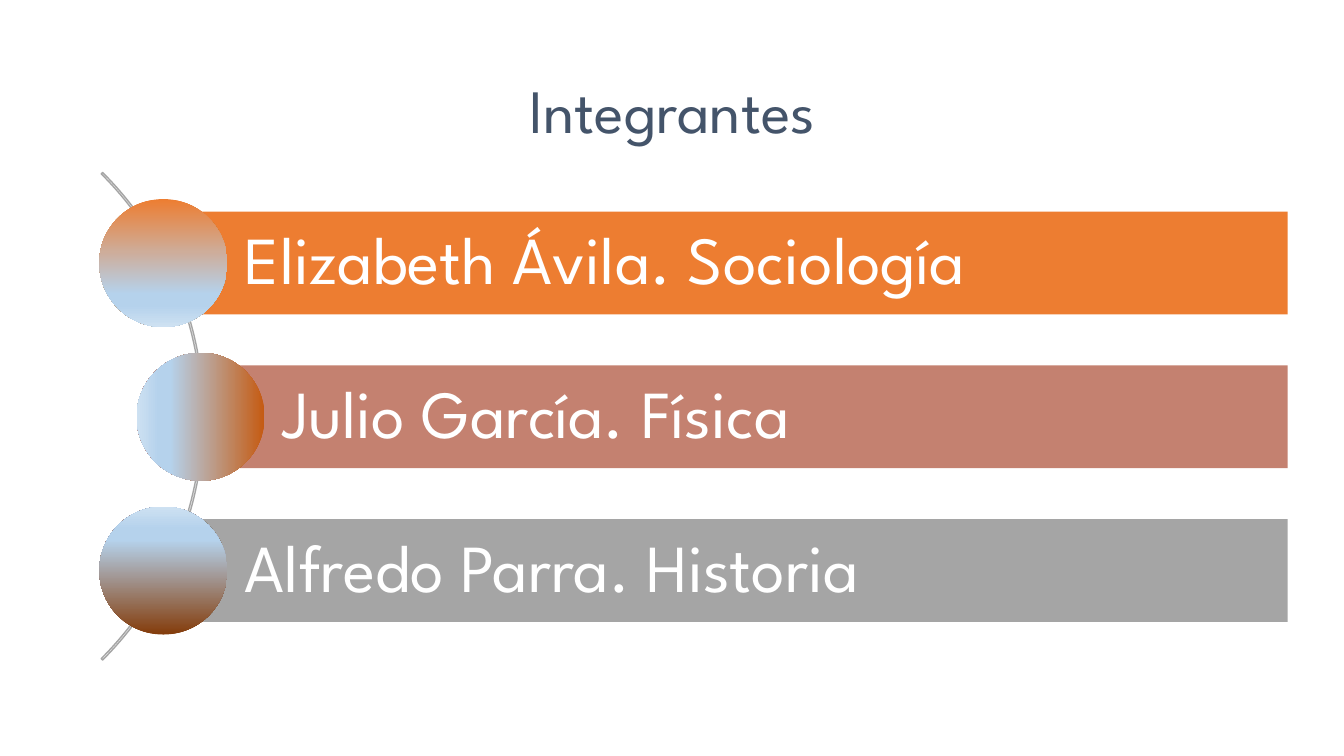
import copy
from dataclasses import dataclass

import pptx
import pptx.dml.color
import pptx.enum.shapes
import pptx.enum.text
import pptx.oxml.ns
import pptx.presentation
import pptx.shapes.autoshape
import pptx.shapes.group
import pptx.slide
import pptx.text.text
import pptx.util
from pptx.util import Inches

FONT_NAME = "League Spartan"
BAR_RIGHT = 12.77
BAR_HEIGHT = 1.02
FIRST_BAR_TOP = 2.1
LAST_BAR_TOP = 5.15
CIRCLE_DIAMETER = 1.27
ARC_DIAMETER = 6.84


@dataclass(frozen=True)
class Member:
    text: str
    bar_left: float
    bar_color: str
    circle_color: str
    gradient_angle: int


MEMBERS = [
    Member("Elizabeth Ávila. Sociología", 1.62, "ED7D31", "ED7D31", 270),
    Member("Julio García. Física", 1.99, "C48170", "C55A11", 180),
    Member("Alfredo Parra. Historia", 1.62, "A5A5A5", "843C0B", 90),
]


def rgb(color: str) -> pptx.dml.color.RGBColor:
    return pptx.dml.color.RGBColor.from_string(color)


def format_paragraph(
    paragraph: pptx.text.text._Paragraph,
    size: float,
    color: str,
    alignment: pptx.enum.text.PP_ALIGN,
) -> None:
    paragraph.alignment = alignment
    paragraph.line_spacing = 0.9
    for run in paragraph.runs:
        run.font.name = FONT_NAME
        run.font.size = pptx.util.Pt(size)
        run.font.color.rgb = rgb(color)


def add_plain_shape(
    group: pptx.shapes.group.GroupShape,
    kind: pptx.enum.shapes.MSO_SHAPE,
    left: float,
    top: float,
    width: float,
    height: float,
) -> pptx.shapes.autoshape.Shape:
    """Add a shape without shadow or outline."""
    shape = group.shapes.add_shape(
        kind, Inches(left), Inches(top), Inches(width), Inches(height)
    )
    shape.shadow.inherit = False
    shape.line.fill.background()
    return shape


def fill_with_gradient(
    shape: pptx.shapes.autoshape.Shape, first_color: str, angle: int
) -> None:
    """Fade from first_color to pale blue; angle runs counter-clockwise."""
    shape.fill.gradient()
    shape.fill.gradient_angle = angle
    stop_list = next(shape.element.iter(pptx.oxml.ns.qn("a:gsLst")))
    for _ in range(2):
        stop_list.append(copy.deepcopy(stop_list[0]))
    stops = [(0, first_color), (0.74, "B5D2EC"), (0.83, "B5D2EC"), (1, "CEE1F2")]
    for stop, (position, color) in zip(shape.fill.gradient_stops, stops):
        stop.position = position
        stop.color.rgb = rgb(color)


def add_title(slide: pptx.slide.Slide) -> None:
    title = slide.shapes.title
    title.left, title.top = Inches(0.92), Inches(0.4)
    title.width, title.height = Inches(11.5), Inches(1.45)
    title.text_frame.text = "Integrantes"
    title.text_frame.vertical_anchor = pptx.enum.text.MSO_ANCHOR.MIDDLE
    format_paragraph(
        title.text_frame.paragraphs[0], 44, "44546A", pptx.enum.text.PP_ALIGN.CENTER
    )


def add_arc(group: pptx.shapes.group.GroupShape) -> None:
    arc = add_plain_shape(
        group, pptx.enum.shapes.MSO_SHAPE.BLOCK_ARC,
        -4.82, 0.71, ARC_DIAMETER, ARC_DIAMETER,
    )
    arc.adjustments[0] = 189
    arc.adjustments[1] = 27
    arc.adjustments[2] = 0.02 / ARC_DIAMETER
    arc.fill.background()
    arc.line.color.rgb = rgb("A5A5A5")
    arc.line.width = pptx.util.Pt(1)


def add_member(
    group: pptx.shapes.group.GroupShape, member: Member, bar_top: float
) -> None:
    bar = add_plain_shape(
        group, pptx.enum.shapes.MSO_SHAPE.RECTANGLE,
        member.bar_left, bar_top, BAR_RIGHT - member.bar_left, BAR_HEIGHT,
    )
    bar.fill.solid()
    bar.fill.fore_color.rgb = rgb(member.bar_color)
    frame = bar.text_frame
    frame.text = member.text
    frame.word_wrap = True
    frame.vertical_anchor = pptx.enum.text.MSO_ANCHOR.MIDDLE
    frame.margin_left = Inches(0.81)
    frame.margin_top = frame.margin_right = frame.margin_bottom = Inches(0.13)
    format_paragraph(
        frame.paragraphs[0], 48, "FFFFFF", pptx.enum.text.PP_ALIGN.LEFT
    )

    circle = add_plain_shape(
        group, pptx.enum.shapes.MSO_SHAPE.OVAL,
        member.bar_left - CIRCLE_DIAMETER / 2,
        bar_top + (BAR_HEIGHT - CIRCLE_DIAMETER) / 2,
        CIRCLE_DIAMETER, CIRCLE_DIAMETER,
    )
    fill_with_gradient(circle, member.circle_color, member.gradient_angle)


def main() -> None:
    presentation = pptx.Presentation()
    presentation.slide_width = Inches(13.33)
    presentation.slide_height = Inches(7.5)
    slide = presentation.slides.add_slide(presentation.slide_layouts[5])
    add_title(slide)
    group = slide.shapes.add_group_shape()
    add_arc(group)
    pitch = (LAST_BAR_TOP - FIRST_BAR_TOP) / (len(MEMBERS) - 1)
    for index, member in enumerate(MEMBERS):
        add_member(group, member, FIRST_BAR_TOP + index * pitch)
    presentation.save("out.pptx")


if __name__ == "__main__":
    main()
